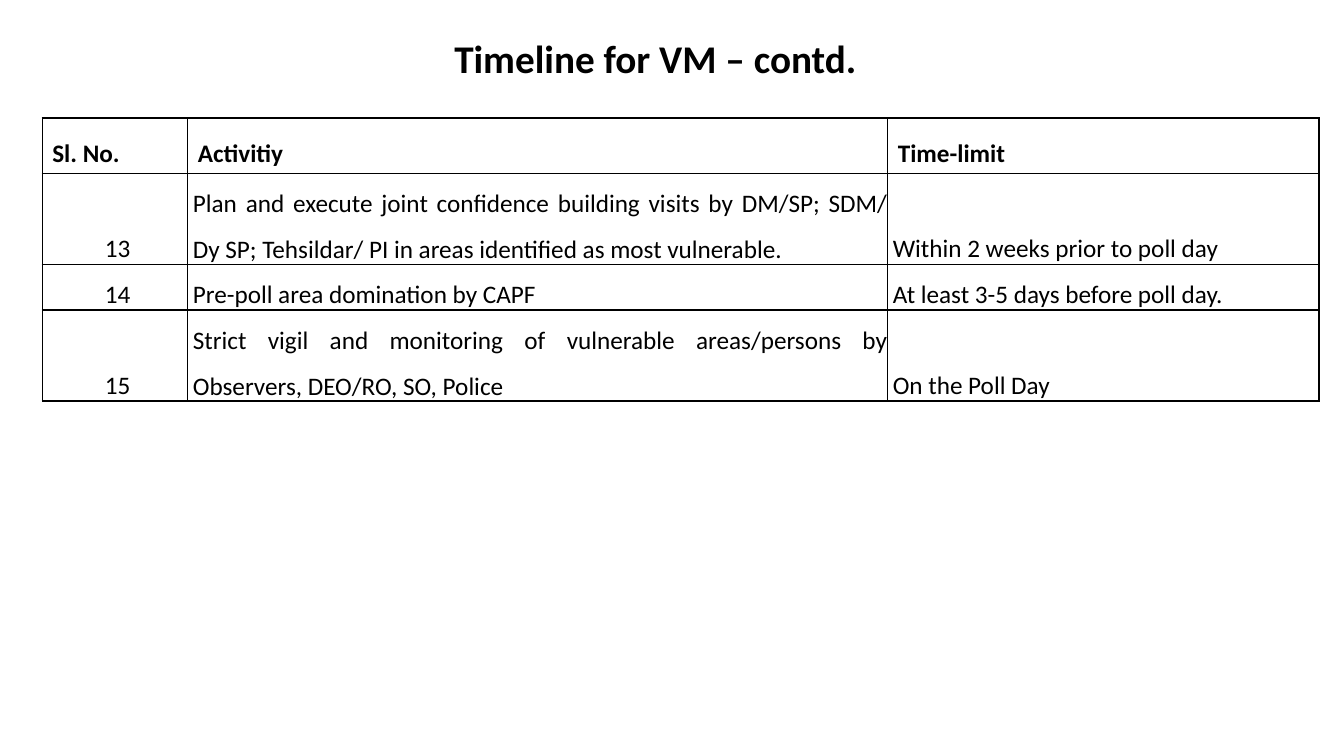
"""Build the slide with the closing steps of the VM timeline."""
from dataclasses import dataclass

from lxml import etree
from pptx import Presentation
from pptx.dml.color import RGBColor
from pptx.enum.text import MSO_ANCHOR, MSO_AUTO_SIZE, PP_ALIGN
from pptx.oxml.ns import qn
from pptx.util import Pt

LEFT, MID, JUST = PP_ALIGN.LEFT, PP_ALIGN.CENTER, PP_ALIGN.JUSTIFY
LOW, CENTER = MSO_ANCHOR.BOTTOM, MSO_ANCHOR.MIDDLE
FIT = MSO_AUTO_SIZE.SHAPE_TO_FIT_TEXT


@dataclass(frozen=True)
class Theme:
    """Hold the colours, font and type sizes."""
    ink: str = "000000"
    font: str = "Calibri"
    head: int = 28
    body: int = 18


theme = Theme()


def write(para, text, size, bold, align):
    """Add one styled run to a paragraph."""
    para.alignment = align
    run = para.add_run()
    run.text = text
    run.font.name = theme.font
    run.font.size = Pt(size)
    run.font.bold = bold
    run.font.color.rgb = RGBColor.from_string(theme.ink)


def frame(cell):
    """Draw a thin line on each side of a cell."""
    props = cell._tc.get_or_add_tcPr()
    for spot, side in enumerate(("lnL", "lnR", "lnT", "lnB")):
        line = etree.Element(qn(f"a:{side}"), w=str(Pt(1)))
        fill = etree.SubElement(line, qn("a:solidFill"))
        etree.SubElement(fill, qn("a:srgbClr"), val=theme.ink)
        props.insert(spot, line)


deck = Presentation()
deck.slide_width, deck.slide_height = Pt(960), Pt(540)
slide = deck.slides.add_slide(deck.slide_layouts[5])

title = slide.shapes.title
title.left, title.top = Pt(315.4), Pt(20.9)
title.width, title.height = Pt(305.3), Pt(41)
box = title.text_frame
box.word_wrap = False
box.auto_size = FIT
box.vertical_anchor = CENTER
write(box.paragraphs[0], "Timeline for VM – contd.", theme.head, True, MID)

rows = [
    ("Sl. No.", "Activitiy", "Time-limit"),
    ("13", "Plan and execute joint confidence building visits by DM/SP; SDM/ "
     "Dy SP; Tehsildar/ PI in areas identified as most vulnerable.",
     "Within 2 weeks prior to poll day"),
    ("14", "Pre-poll area domination by CAPF", "At least 3-5 days before poll day."),
    ("15", "Strict vigil and monitoring of vulnerable areas/persons by "
     "Observers, DEO/RO, SO, Police", "On the Poll Day"),
]
widths = (104, 500, 308)
heights = (39.5, 65, 32.5, 65)
aligns = (MID, JUST, LEFT)

table = slide.shapes.add_table(
    len(rows), len(widths), Pt(30.2), Pt(84.3), Pt(sum(widths)), Pt(sum(heights))).table
table.first_row = table.horz_banding = False
for col, width in zip(table.columns, widths):
    col.width = Pt(width)

for r, (row, height) in enumerate(zip(rows, heights)):
    table.rows[r].height = Pt(height)
    top = r == 0
    for c, text in enumerate(row):
        cell = table.cell(r, c)
        cell.fill.background()
        cell.vertical_anchor = LOW
        cell.margin_left = Pt(7.2 if top else 3.6)
        cell.margin_right = Pt(7.2 if top else 0)
        cell.margin_top = cell.margin_bottom = Pt(3.6 if top else 0)
        para = cell.text_frame.paragraphs[0]
        para.line_spacing = 1.5
        write(para, text, theme.body, top, LEFT if top else aligns[c])
        frame(cell)

deck.save("out.pptx")
